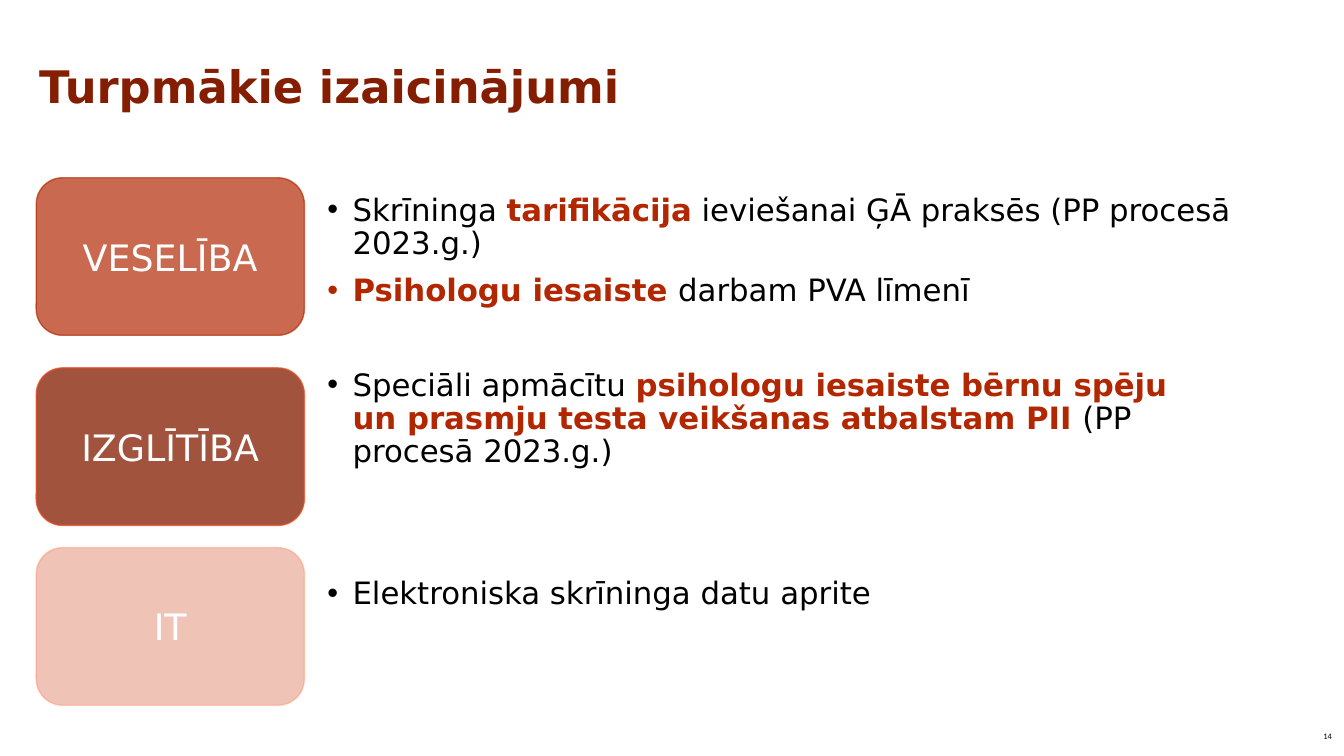
"""Build the slide on upcoming challenges in health, education and IT."""
from dataclasses import dataclass

from lxml.etree import SubElement
from pptx import Presentation
from pptx.dml.color import RGBColor
from pptx.enum.shapes import MSO_SHAPE as SHAPE
from pptx.enum.text import MSO_ANCHOR as ANCHOR, PP_ALIGN as ALIGN
from pptx.oxml.ns import qn
from pptx.util import Pt

BLACK = RGBColor(0x00, 0x00, 0x00)
WHITE = RGBColor(0xFF, 0xFF, 0xFF)
RED = RGBColor(0xB2, 0x26, 0x00)
DARK_RED = RGBColor(0x85, 0x1D, 0x00)
ORANGE = RGBColor(0xE8, 0x4C, 0x22)
SALMON = RGBColor(0xE1, 0x8B, 0x6F)
PEACH = RGBColor(0xFF, 0x97, 0x7A)

FONT = "DejaVu Sans"
NUMBER_FONT = "Calibri"
LABEL_LEFT, LABEL_WIDTH, LABEL_HEIGHT = 25.9, 191.5, 112.5
BULLETS_LEFT, BULLETS_WIDTH, BULLETS_HEIGHT = 226.8, 667.4, 90
INDENT = 18


@dataclass(frozen=True)
class Part:
    text: str
    strong: bool = False
    new_line: bool = False


@dataclass(frozen=True)
class Sector:
    name: str
    top: float
    fill: RGBColor
    fill_alpha: int
    line: RGBColor
    line_alpha: int
    bullets_top: float
    bullets: tuple[tuple[Part, ...], ...]


SECTORS = (
    Sector("VESELĪBA", 127, RED, 69, RED, 65, 135.4, (
        (Part("Skrīninga "), Part("tarifikācija", True),
         Part(" ieviešanai ĢĀ praksēs (PP procesā 2023.g.)")),
        (Part("Psihologu iesaiste ", True), Part("darbam PVA līmenī")),
    )),
    Sector("IZGLĪTĪBA", 262.8, DARK_RED, 76, ORANGE, 74, 260.4, (
        (Part("Speciāli apmācītu "),
         Part("psihologu iesaiste bērnu spēju ", True),
         Part("un prasmju testa veikšanas atbalstam PII ", True, True),
         Part("(PP procesā 2023.g.)")),
    )),
    Sector("IT", 391.2, SALMON, 51, PEACH, 51, 409, (
        (Part("Elektroniska skrīninga datu aprite"),),
    )),
)


def style(r, size: float, color: RGBColor, bold: bool = False, font: str = FONT) -> None:
    r.font.name = font
    r.font.size = Pt(size)
    r.font.bold = bold
    r.font.color.rgb = color


def set_alpha(fill, percent: int) -> None:
    color = fill._xPr.find(qn("a:solidFill"))[0]
    SubElement(color, qn("a:alpha")).set("val", str(percent * 1000))


def add_text_box(s, left: float, top: float, width: float, height: float):
    tf = s.shapes.add_textbox(Pt(left), Pt(top), Pt(width), Pt(height)).text_frame
    tf.word_wrap = True
    return tf


def add_label(s, sector: Sector) -> None:
    sp = s.shapes.add_shape(SHAPE.ROUNDED_RECTANGLE, Pt(LABEL_LEFT), Pt(sector.top),
                            Pt(LABEL_WIDTH), Pt(LABEL_HEIGHT))
    sp.shadow.inherit = False
    for fill, color, alpha in ((sp.fill, sector.fill, sector.fill_alpha),
                               (sp.line.fill, sector.line, sector.line_alpha)):
        fill.solid()
        fill.fore_color.rgb = color
        set_alpha(fill, alpha)
    sp.line.width = Pt(1)
    tf = sp.text_frame
    tf.text = sector.name
    tf.vertical_anchor = ANCHOR.MIDDLE
    p = tf.paragraphs[0]
    p.alignment = ALIGN.CENTER
    style(p.runs[0], 26, WHITE)


def add_bullets(s, sector: Sector) -> None:
    tf = add_text_box(s, BULLETS_LEFT, sector.bullets_top, BULLETS_WIDTH, BULLETS_HEIGHT)
    for i, parts in enumerate(sector.bullets):
        p = tf.add_paragraph() if i else tf.paragraphs[0]
        p.line_spacing = 0.9
        p.space_before = Pt(10)
        props = p._p.get_or_add_pPr()
        props.set("marL", str(Pt(INDENT)))
        props.set("indent", str(-Pt(INDENT)))
        SubElement(props, qn("a:buFont")).set("typeface", "Arial")
        SubElement(props, qn("a:buChar")).set("char", "•")
        for part in parts:
            if part.new_line:
                p.add_line_break()
            r = p.add_run()
            r.text = part.text
            style(r, 22, RED if part.strong else BLACK, part.strong)


def add_title(s) -> None:
    tf = add_text_box(s, 20.9, 42.5, 828, 104.4)
    tf.text = "Turpmākie izaicinājumi"
    p = tf.paragraphs[0]
    p.line_spacing = 0.9
    style(p.runs[0], 32, DARK_RED, bold=True)


def add_page_number(s) -> None:
    tf = add_text_box(s, 936.7, 511.2, 23.3, 28.8)
    tf.text = "14"
    tf.vertical_anchor = ANCHOR.MIDDLE
    p = tf.paragraphs[0]
    p.alignment = ALIGN.CENTER
    style(p.runs[0], 6, BLACK, font=NUMBER_FONT)


def main() -> None:
    prs = Presentation()
    prs.slide_width, prs.slide_height = Pt(960), Pt(540)
    s = prs.slides.add_slide(prs.slide_layouts[6])
    add_title(s)
    for sector in SECTORS:
        add_label(s, sector)
        add_bullets(s, sector)
    add_page_number(s)
    prs.save("out.pptx")


if __name__ == "__main__":
    main()
